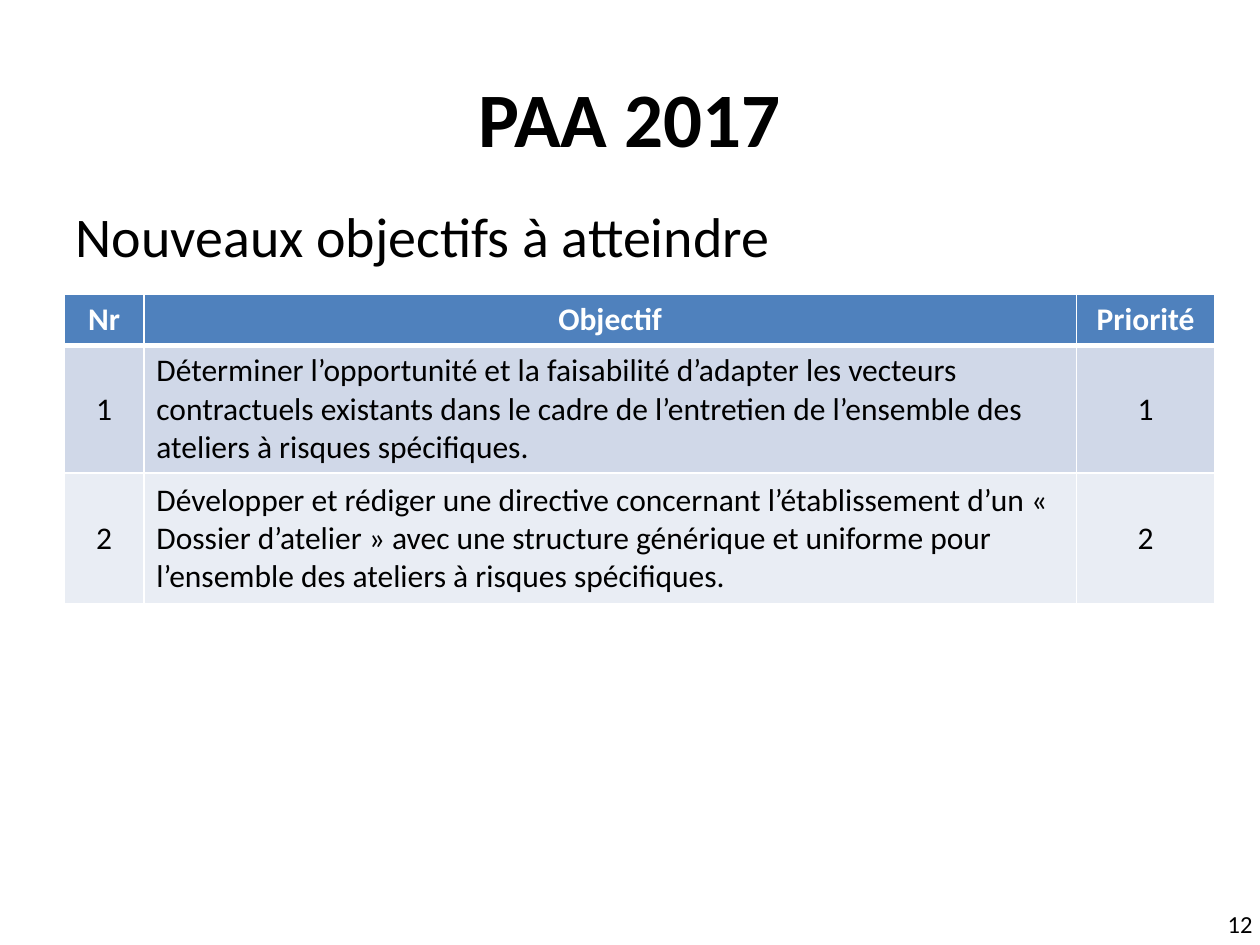
from dataclasses import dataclass

from lxml import etree
from pptx import Presentation
from pptx import util as u
from pptx.dml.color import RGBColor
from pptx.enum import text
from pptx.oxml import ns


@dataclass(frozen=True)
class Theme:
    font: str = "Calibri"
    black: str = "000000"
    white: str = "FFFFFF"
    header: str = "4F81BD"
    bands: tuple = ("D0D8E8", "E9EDF4")
    title: int = 44
    body: int = 32
    table: int = 18
    number: int = 14


THEME = Theme()
CENTER, LEFT, RIGHT = (text.PP_ALIGN.CENTER, text.PP_ALIGN.LEFT,
                       text.PP_ALIGN.RIGHT)
MIDDLE, TOP = text.MSO_ANCHOR.MIDDLE, text.MSO_ANCHOR.TOP

HEADINGS = ("Nr", "Objectif", "Priorité")
OBJECTIVES = (
    ("1", "Déterminer l’opportunité et la faisabilité d’adapter les vecteurs "
          "contractuels existants dans le cadre de l’entretien de l’ensemble "
          "des ateliers à risques spécifiques.", "1"),
    ("2", "Développer et rédiger une directive concernant l’établissement "
          "d’un « Dossier d’atelier » avec une structure générique et "
          "uniforme pour l’ensemble des ateliers à risques spécifiques.", "2"),
)
COLUMN_WIDTHS = (1.6, 18.8, 2.79)
ROW_HEIGHTS = (1.02, 2.58, 2.64)


def place(sp, left, top, width, height):
    sp.left, sp.top = u.Cm(left), u.Cm(top)
    sp.width, sp.height = u.Cm(width), u.Cm(height)


def write(tf, words, size, align, color=THEME.black, bold=False):
    p = tf.paragraphs[0]
    p.alignment = align
    p.space_before = u.Pt(0)
    r = p.add_run()
    r.text = words
    r.font.name, r.font.size, r.font.bold = THEME.font, u.Pt(size), bold
    r.font.color.rgb = RGBColor.from_string(color)


def frame(sp, anchor):
    tf = sp.text_frame
    tf.word_wrap = True
    tf.auto_size = text.MSO_AUTO_SIZE.NONE
    tf.vertical_anchor = anchor
    return tf


def remove_bullet(p):
    pPr = p._p.get_or_add_pPr()
    pPr.set("marL", "0")
    pPr.set("indent", "0")
    etree.SubElement(pPr, ns.qn("a:buNone"))


def set_borders(cell, bottom):
    tcPr = cell._tc.get_or_add_tcPr()
    for side, points in (("L", 1), ("R", 1), ("T", 1), ("B", bottom)):
        ln = etree.SubElement(tcPr, ns.qn("a:ln" + side), w=str(u.Pt(points)))
        fill = etree.SubElement(ln, ns.qn("a:solidFill"))
        etree.SubElement(fill, ns.qn("a:srgbClr"), val=THEME.white)


def fill_cell(cell, words, fill, align, is_header):
    set_borders(cell, 3 if is_header else 1)
    cell.fill.solid()
    cell.fill.fore_color.rgb = RGBColor.from_string(fill)
    cell.vertical_anchor = MIDDLE
    write(cell.text_frame, words, THEME.table, align,
          THEME.white if is_header else THEME.black, is_header)


def add_objectives(s):
    rows = (HEADINGS,) + OBJECTIVES
    table = s.shapes.add_table(
        len(rows), len(HEADINGS), u.Cm(1.3), u.Cm(5.93),
        u.Cm(sum(COLUMN_WIDTHS)), u.Cm(sum(ROW_HEIGHTS))).table
    for column, width in zip(table.columns, COLUMN_WIDTHS):
        column.width = u.Cm(width)
    for i, (row, height) in enumerate(zip(rows, ROW_HEIGHTS)):
        table.rows[i].height = u.Cm(height)
        fill = THEME.bands[(i - 1) % 2] if i else THEME.header
        for j, words in enumerate(row):
            align = LEFT if i and j == 1 else CENTER
            fill_cell(table.cell(i, j), words, fill, align, i == 0)


def main():
    prs = Presentation()
    prs.slide_width, prs.slide_height = u.Cm(25.4), u.Cm(19.05)
    s = prs.slides.add_slide(prs.slide_layouts[1])

    # Title
    title = s.shapes.title
    place(title, 1.27, 0.76, 22.86, 3.18)
    write(frame(title, MIDDLE), "PAA 2017", THEME.title, CENTER, bold=True)

    # Subheading
    body = s.placeholders[1]
    place(body, 1.27, 3.94, 24.13, 15.11)
    tf = frame(body, TOP)
    remove_bullet(tf.paragraphs[0])
    write(tf, "Nouveaux objectifs à atteindre", THEME.body, LEFT)

    # Slide number
    number = s.shapes.add_textbox(u.Cm(21), u.Cm(18.11), u.Cm(4.5), u.Cm(1.02))
    write(frame(number, MIDDLE), "12", THEME.number, RIGHT)

    # Table of objectives
    add_objectives(s)

    prs.save("out.pptx")


if __name__ == "__main__":
    main()
